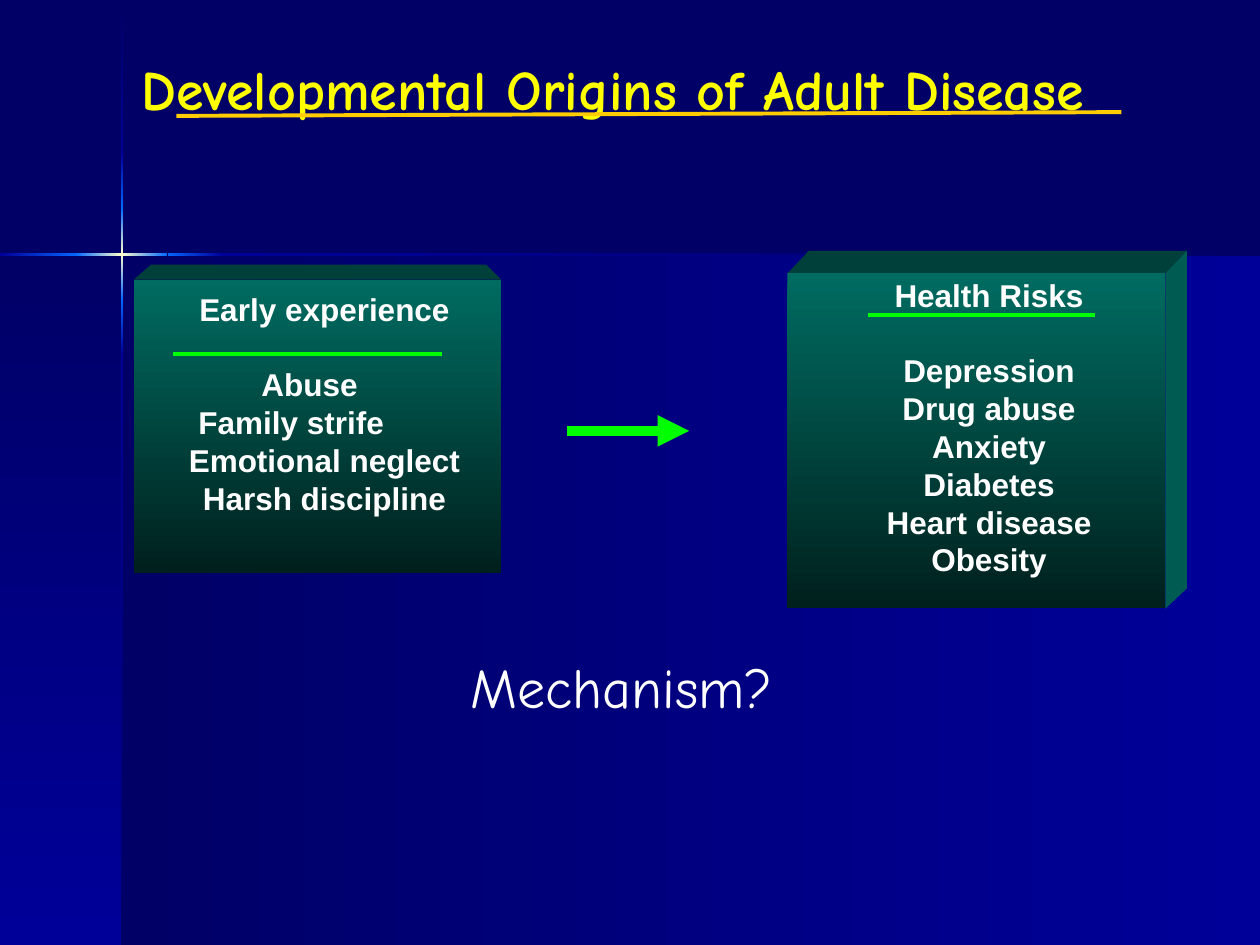
"""Build the slide on developmental origins of adult disease."""
from lxml.etree import SubElement
from pptx import Presentation
from pptx.dml.color import RGBColor
from pptx.enum.shapes import MSO_CONNECTOR as CONNECTOR, MSO_SHAPE as SHAPE
from pptx.enum.text import MSO_AUTO_SIZE as AUTO_SIZE, PP_ALIGN as ALIGN
from pptx.oxml.ns import qn
from pptx.util import Inches, Pt

NAVY = RGBColor(0x00, 0x00, 0x66)
BLUE = RGBColor(0x00, 0x00, 0x99)
BRIGHT = RGBColor(0x00, 0x66, 0xFF)
CREAM = RGBColor(0xFF, 0xFF, 0xCC)
TEAL = RGBColor(0x00, 0x6B, 0x61)
DARK_TEAL = RGBColor(0x00, 0x20, 0x1D)
TOP_TEAL = RGBColor(0x00, 0x40, 0x3A)
SIDE_TEAL = RGBColor(0x00, 0x5C, 0x53)
GREEN = RGBColor(0x00, 0xFF, 0x00)
GOLD = RGBColor(0xFF, 0xCC, 0x00)
YELLOW = RGBColor(0xFF, 0xFF, 0x00)
WHITE = RGBColor(0xFF, 0xFF, 0xFF)

presentation = Presentation()
presentation.slide_width, presentation.slide_height = Inches(10), Inches(7.5)
slide = presentation.slides.add_slide(presentation.slide_layouts[6])
slide.background.fill.solid()
slide.background.fill.fore_color.rgb = NAVY


def add_gradient_box(box, colors, angle):
    shape = slide.shapes.add_shape(SHAPE.RECTANGLE, *map(Inches, box))
    shape.shadow.inherit = False
    shape.line.fill.background()
    shape.fill.gradient()
    shape.fill.gradient_angle = -angle % 360
    stops = shape._element.spPr.find(qn("a:gradFill")).find(qn("a:gsLst"))
    for stop in list(stops):
        stops.remove(stop)
    for index, color in enumerate(colors):
        position = 100000 * index // (len(colors) - 1)
        stop = SubElement(stops, qn("a:gs"), pos=str(position))
        SubElement(stop, qn("a:srgbClr"), val=str(color))


def add_text(box, paragraphs, formats, wrap=False):
    frame = slide.shapes.add_textbox(*map(Inches, box)).text_frame
    frame.word_wrap = wrap
    frame.auto_size = AUTO_SIZE.SHAPE_TO_FIT_TEXT
    for index, text in enumerate(paragraphs):
        paragraph = frame.paragraphs[0] if index == 0 else frame.add_paragraph()
        paragraph.alignment = ALIGN.CENTER
        run = paragraph.add_run()
        run.text = text
        run.font.color.rgb = formats["color"]
        for name, value in formats["font"].items():
            setattr(run.font, name, value)
        for name, value in formats.get("paragraph", {}).items():
            setattr(paragraph, name, value)
        if index == 1:
            paragraph.space_before = Pt(21.6)
        if text.endswith("\t"):
            tabs = SubElement(paragraph._p.get_or_add_pPr(), qn("a:tabLst"))
            for position in (1, 2):
                SubElement(tabs, qn("a:tab"), pos=str(Inches(position)), algn="l")


BACKDROP = [
    ((0.97, 2.02, 9.03, 5.48), (NAVY, BLUE), 0),
    ((0, 2.02, 0.97, 5.48), (NAVY, BLUE), 90),
    ((0.96, 0.01, 0.02, 1.2), (NAVY, BLUE), 90),
    ((0.96, 2.82, 0.02, 4.68), (BLUE, NAVY), 90),
    ((1.77, 2.01, 8.23, 0.02), (BLUE, NAVY), 0),
    ((0.96, 2.38, 0.02, 0.44), (BRIGHT, BLUE), 90),
    ((0.96, 1.21, 0.02, 0.44), (BLUE, BRIGHT), 90),
    ((0.96, 1.65, 0.02, 0.73), (BRIGHT, CREAM, BRIGHT), 90),
    ((0, 2.01, 0.61, 0.02), (BLUE, BRIGHT), 0),
    ((1.33, 2.01, 0.44, 0.02), (BRIGHT, BLUE), 0),
    ((0.6, 2.01, 0.73, 0.02), (BRIGHT, CREAM, BRIGHT), 0),
]
for box, colors, angle in BACKDROP:
    add_gradient_box(box, colors, angle)

BOX_FACES = [
    (((6.25, 2.17), (6.42, 1.99), (9.42, 1.99), (9.25, 2.17)), TOP_TEAL),
    (((9.25, 2.17), (9.42, 1.99), (9.42, 4.67), (9.25, 4.83)), SIDE_TEAL),
    (((1.06, 2.22), (1.2, 2.1), (3.86, 2.1), (3.98, 2.22)), TOP_TEAL),
]
for points, color in BOX_FACES:
    corners = [(Inches(x), Inches(y)) for x, y in points]
    builder = slide.shapes.build_freeform(*corners[0])
    builder.add_line_segments(corners[1:], close=True)
    face = builder.convert_to_shape()
    face.shadow.inherit = False
    face.fill.solid()
    face.fill.fore_color.rgb = color
    face.line.fill.background()

for box in [(6.25, 2.17, 3, 2.66), (1.06, 2.22, 2.92, 2.33)]:
    add_gradient_box(box, (TEAL, DARK_TEAL), 90)

LIST_FORMATS = {
    "color": WHITE,
    "font": {"name": "Arial", "size": Pt(18), "bold": True},
    "paragraph": {"line_spacing": Pt(21.6)},
}
QUESTION_FORMATS = {
    "color": WHITE,
    "font": {"name": "Comic Neue", "size": Pt(32), "bold": False},
}
TITLE_FORMATS = {
    "color": YELLOW,
    "font": {"name": "Comic Neue", "size": Pt(32), "bold": True},
}
EXPERIENCES = ["Early experience", "Abuse\t", "Family strife\t",
               "Emotional neglect", "Harsh discipline"]
RISKS = ["Health Risks", "Depression", "Drug abuse", "Anxiety", "Diabetes",
         "Heart disease", "Obesity"]
add_text((0.98, 2.25, 3.19, 2.2), EXPERIENCES, LIST_FORMATS, wrap=True)
add_text((6.85, 2.14, 2, 2.5), RISKS, LIST_FORMATS, wrap=True)
add_text((3.58, 5.13, 2.71, 0.63), ["Mechanism?"], QUESTION_FORMATS)
add_text((0.55, 0.38, 8.63, 0.63), ["Developmental Origins of Adult Disease"],
         TITLE_FORMATS)

LINES = [
    ((4.5, 3.42, 5.47, 3.42), GREEN, 6, True),
    ((1.37, 2.81, 3.51, 2.81), GREEN, 2, False),
    ((6.89, 2.5, 8.69, 2.5), GREEN, 2, False),
    ((1.4, 0.92, 8.9, 0.89), GOLD, 2.25, False),
]
for ends, color, width, has_arrowhead in LINES:
    connector = slide.shapes.add_connector(CONNECTOR.STRAIGHT, *map(Inches, ends))
    connector.line.color.rgb = color
    connector.line.width = Pt(width)
    if has_arrowhead:
        SubElement(connector.line._get_or_add_ln(), qn("a:tailEnd"), type="triangle")
    SubElement(connector._element.spPr, qn("a:effectLst"))

presentation.save("out.pptx")
